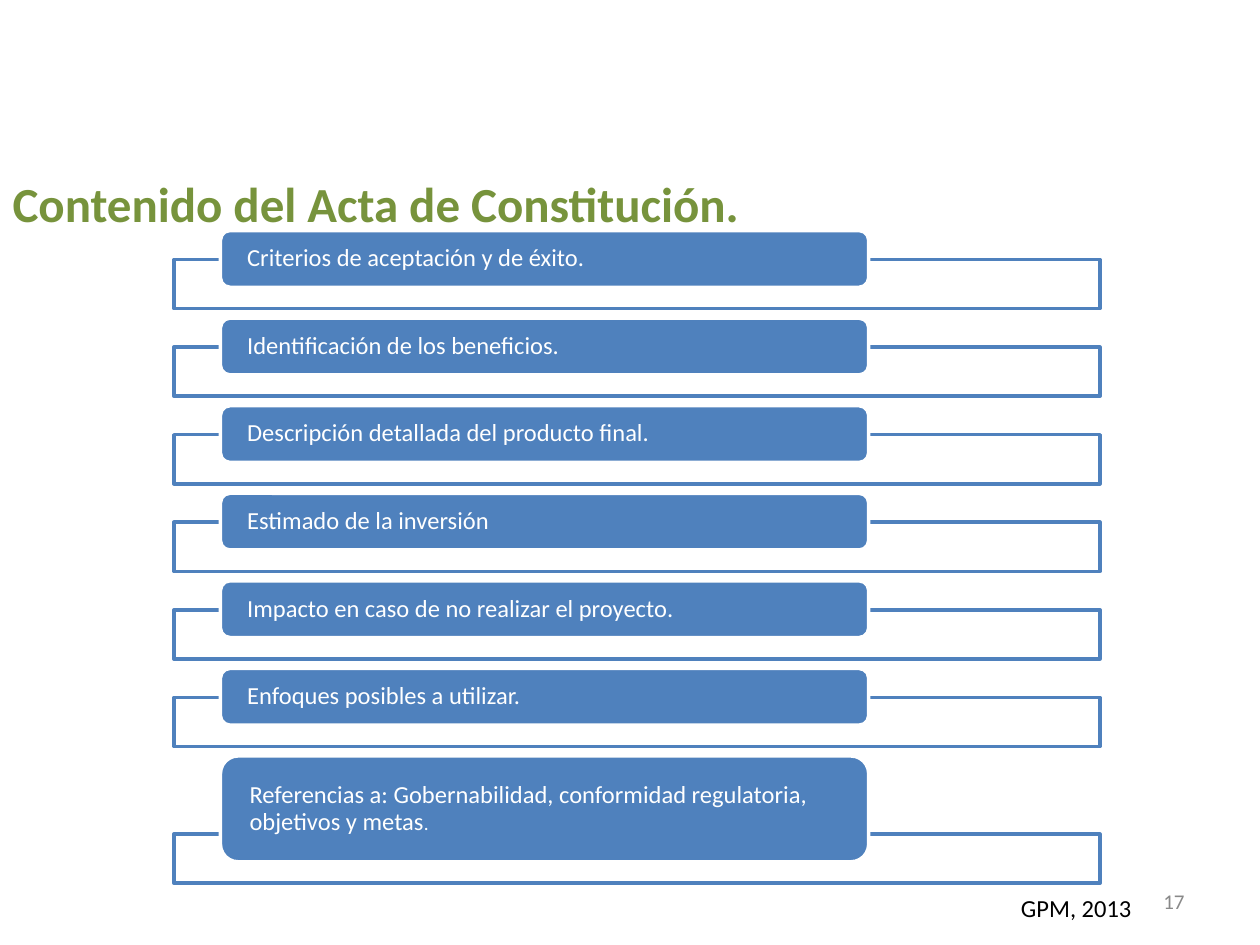
import pptx
import pptx.util
import pptx.dml.color
import pptx.enum.shapes
import pptx.enum.text
import pptx.oxml.ns
from lxml import etree

Inches, Pt = pptx.util.Inches, pptx.util.Pt
SHAPE = pptx.enum.shapes.MSO_SHAPE
ANCHOR = pptx.enum.text.MSO_ANCHOR
ALIGN = pptx.enum.text.PP_ALIGN
COLORS = {"title": "77933C", "blue": "4F81BD", "white": "FFFFFF",
          "black": "000000", "number": "898989"}
TOPICS = [
    "Criterios de aceptación y de éxito.",
    "Identificación de los beneficios.",
    "Descripción detallada del producto final.",
    "Estimado de la inversión",
    "Impacto en caso de no realizar el proyecto.",
    "Enfoques posibles a utilizar.",
    "Referencias a: Gobernabilidad, conformidad regulatoria, objetivos y metas",
]


def rgb(name):
    return pptx.dml.color.RGBColor.from_string(COLORS[name])


def style(para, size, color, bold=False, align=ALIGN.LEFT):
    para.alignment = align
    para.font.name = "Calibri"
    para.font.size = Pt(size)
    para.font.bold = bold
    para.font.color.rgb = rgb(color)


def add_title(page, left, top, width, height):
    title = page.shapes.title
    title.left, title.top, title.width, title.height = left, top, width, height
    title.text_frame.text = "Contenido del Acta de Constitución."
    title.text_frame.vertical_anchor = ANCHOR.TOP
    title.text_frame.auto_size = pptx.enum.text.MSO_AUTO_SIZE.NONE
    style(title.text_frame.paragraphs[0], 28, "title", bold=True)


def add_note(page, text, size, color, left, top, width, height):
    """Right-aligned small text at the foot of the page."""
    frame = page.shapes.add_textbox(left, top, width, height).text_frame
    frame.word_wrap = True
    frame.vertical_anchor = ANCHOR.MIDDLE
    frame.text = text
    style(frame.paragraphs[0], size, color, align=ALIGN.RIGHT)


def add_panel(page, kind, fill, line, left, top, width, height):
    panel = page.shapes.add_shape(kind, left, top, width, height)
    panel.shadow.inherit = False
    panel.fill.solid()
    panel.fill.fore_color.rgb = rgb(fill)
    panel.line.color.rgb = rgb(line)
    panel.line.width = Pt(2)
    return panel


def add_topic(page, text, left, top, width, label_height):
    """A rounded label over the top edge of a thin outlined frame."""
    frame_top = top + label_height - Inches(0.22)
    frame = add_panel(page, SHAPE.RECTANGLE, "white", "blue",
                      left, frame_top, width, Inches(0.39))
    qn = pptx.oxml.ns.qn
    fill_color = frame.element.spPr.find(qn("a:solidFill"))[0]
    etree.SubElement(fill_color, qn("a:alpha"), val="90000")

    label = add_panel(page, SHAPE.ROUNDED_RECTANGLE, "blue", "white",
                      left + Inches(0.37), top, int(width * 0.7), label_height)
    box = label.text_frame
    box.word_wrap = True
    box.vertical_anchor = ANCHOR.MIDDLE
    box.margin_left = box.margin_right = Inches(0.19)
    box.margin_top = box.margin_bottom = 0
    box.text = text
    para = box.paragraphs[0]
    para.line_spacing = 0.9
    style(para, 14, "white")
    return para


def add_topics(page, left, top, width, pitch):
    for row, text in enumerate(TOPICS):
        last = row == len(TOPICS) - 1
        para = add_topic(page, text, left, top + row * pitch, width,
                         Inches(0.84 if last else 0.45))
    span = para.add_run()
    span.text = "."
    span.font.size = Pt(11)


def main():
    deck = pptx.Presentation()
    deck.slide_width, deck.slide_height = Inches(10), Inches(7.5)
    page = deck.slides.add_slide(deck.slide_layouts[5])
    add_title(page, 0, Inches(1.33), Inches(10), Inches(0.6))
    add_note(page, "GPM, 2013", 14, "black",
             Inches(7.58), Inches(7.03), Inches(1.5), Inches(0.35))
    add_note(page, "17", 12, "number",
             Inches(8.78), Inches(6.95), Inches(0.72), Inches(0.4))
    add_topics(page, Inches(1.38), Inches(1.83), Inches(7.35),
               pitch=Inches(4.17) // 6)
    deck.save("out.pptx")


if __name__ == "__main__":
    main()
